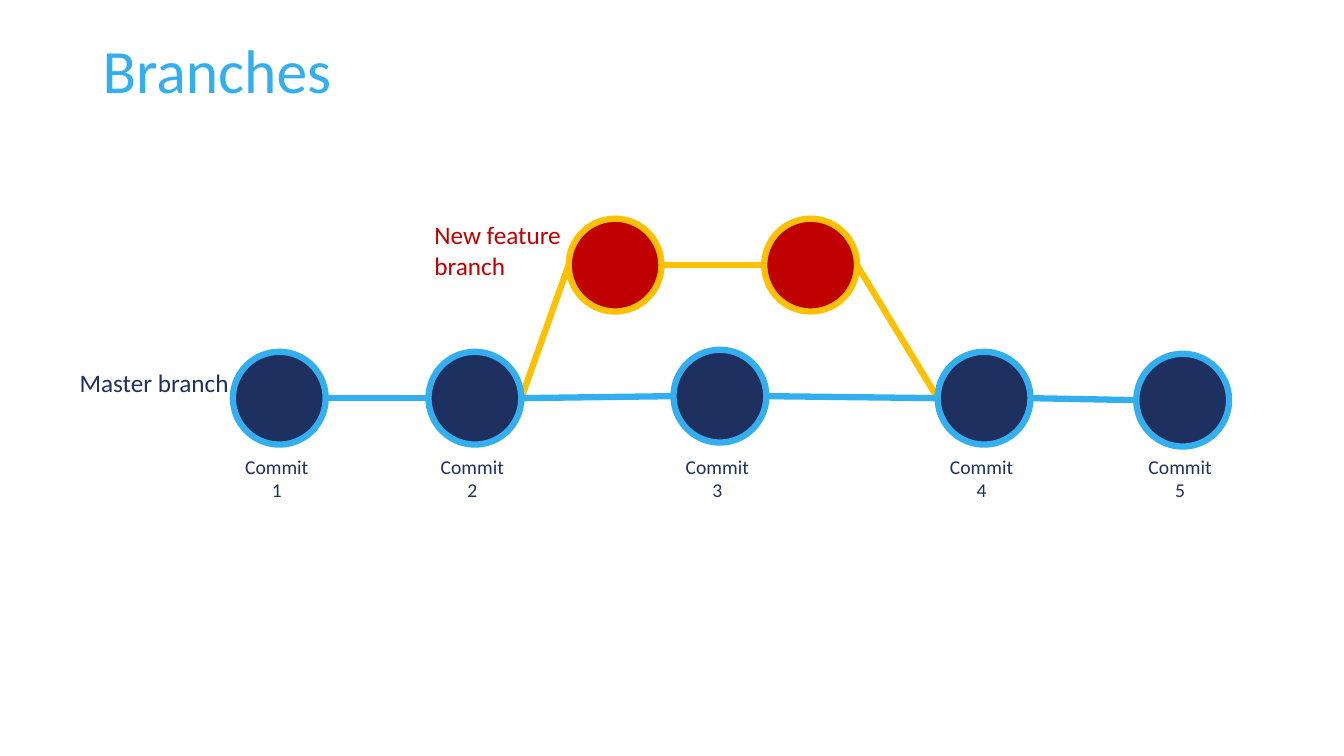
from lxml import etree
from pptx import Presentation
from pptx.dml.color import RGBColor
from pptx.enum import shapes, text
from pptx.oxml import ns
from pptx.util import Inches, Pt

NAVY, BLUE, RED, GOLD = "1D305F", "33AEEF", "C00000", "FFC000"
DIAMETER = 0.92


def color(value):
    return RGBColor.from_string(value)


def add_text(lines, box, size, fill, frame_format, paragraph_format):
    frame = slide.shapes.add_textbox(*map(Inches, box)).text_frame
    for name, value in frame_format.items():
        setattr(frame, name, value)
    frame.text = "\n".join(lines)
    for paragraph in frame.paragraphs:
        for name, value in paragraph_format.items():
            setattr(paragraph, name, value)
        font = paragraph.runs[0].font
        for name, value in {"name": "Calibri", "size": Pt(size)}.items():
            setattr(font, name, value)
        font.color.rgb = color(fill)


presentation = Presentation()
presentation.slide_width = Inches(13.33)
presentation.slide_height = Inches(7.5)
slide = presentation.slides.add_slide(presentation.slide_layouts[6])

master = [(2.31, 3.49), (4.25, 3.49), (6.68, 3.47), (9.3, 3.49), (11.27, 3.51)]
feature = [(5.64, 2.17), (7.58, 2.17)]

detour = [master[1], *feature, master[3]]
for commits, line_color in ((detour, GOLD), (master, BLUE)):
    for (left, top), (next_left, next_top) in zip(commits, commits[1:]):
        ends = (left + DIAMETER, top + DIAMETER / 2, next_left, next_top + DIAMETER / 2)
        connector = slide.shapes.add_connector(
            shapes.MSO_CONNECTOR.STRAIGHT, *map(Inches, ends))
        connector.line.color.rgb = color(line_color)
        connector.line.width = Pt(4.5)
        etree.SubElement(connector._element.spPr, ns.qn("a:effectLst"))

for commits, fill, outline in ((master, NAVY, BLUE), (feature, RED, GOLD)):
    for left, top in commits:
        circle = slide.shapes.add_shape(
            shapes.MSO_SHAPE.OVAL, *map(Inches, (left, top, DIAMETER, DIAMETER)))
        circle.shadow.inherit = False
        circle.fill.solid()
        circle.fill.fore_color.rgb = color(fill)
        circle.line.color.rgb = color(outline)
        circle.line.width = Pt(4.5)

add_text(["Branches"], (0.92, 0, 11.5, 1.45), 44, BLUE,
         {"word_wrap": True, "vertical_anchor": text.MSO_ANCHOR.MIDDLE},
         {"line_spacing": 0.9})

label_format = {"word_wrap": True, "auto_size": text.MSO_AUTO_SIZE.SHAPE_TO_FIT_TEXT}
add_text(["Master branch"], (0.69, 3.59, 1.98, 0.4), 18, NAVY, label_format, {})
add_text(["New feature branch"], (4.21, 2.13, 1.98, 0.71), 18, RED, label_format, {})

for number, (left, top) in enumerate(master, 1):
    add_text(["Commit", str(number)], (left + 0.02, 4.46, 0.83, 0.57), 14, NAVY,
             {**label_format, "word_wrap": False},
             {"alignment": text.PP_ALIGN.CENTER})

presentation.save("out.pptx")
